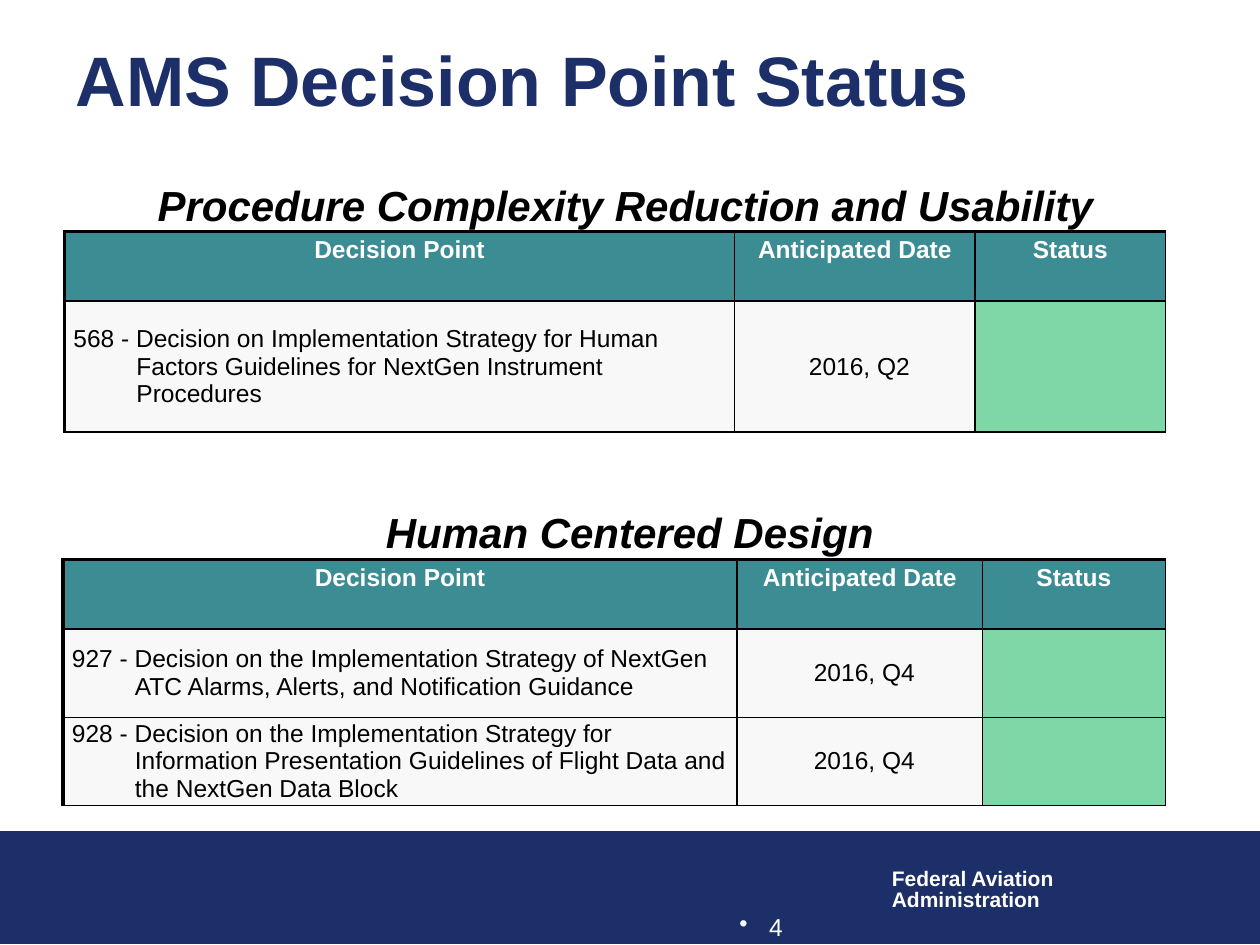
"""Build the AMS decision point status slide."""
from lxml import etree
from pptx import Presentation
from pptx import util as u
from pptx.dml.color import RGBColor
from pptx.enum import shapes, text
from pptx.oxml.ns import qn

NAVY = RGBColor(0x1D, 0x2F, 0x68)
TEAL = RGBColor(0x3C, 0x8C, 0x93)
GREY = RGBColor(0xF2, 0xF2, 0xF2)
GREEN = RGBColor(0x00, 0xB0, 0x50)
BLACK = RGBColor(0, 0, 0)
WHITE = RGBColor(0xFF, 0xFF, 0xFF)
HEADERS = ("Decision Point", "Anticipated Date", "Status")
CENTER = text.PP_ALIGN.CENTER
THIN, THICK = u.Pt(1), u.Pt(2.25)


def style_frame(frame, size, color, bold=False, italic=False, align=text.PP_ALIGN.LEFT):
    """Give every paragraph of a frame the same alignment and font."""
    for para in frame.paragraphs:
        para.alignment = align
        for span in para.runs:
            font = span.font
            font.name, font.size = "Arial", u.Pt(size)
            font.bold, font.italic = bold, italic
            font.color.rgb = color


def set_indent(para, left, hanging):
    """Set the left margin and hanging indent of a paragraph."""
    properties = para._p.get_or_add_pPr()
    properties.set("marL", str(u.Cm(left)))
    properties.set("indent", str(-u.Cm(hanging)))
    return properties


def add_text(page, place, words, size, color, wrap=True, **style):
    """Add a styled text box at a place given in centimetres."""
    box = page.shapes.add_textbox(*map(u.Cm, place))
    frame = box.text_frame
    frame.word_wrap = wrap
    frame.text = words
    style_frame(frame, size, color, **style)
    return frame


def set_borders(cell, first_column, first_row):
    """Draw black cell borders, thicker on the table's left and top edges."""
    widths = {"lnL": THICK if first_column else THIN, "lnR": THIN,
              "lnT": THICK if first_row else THIN, "lnB": THIN}
    properties = cell._tc.get_or_add_tcPr()
    for side, width in widths.items():
        line = etree.SubElement(properties, qn(f"a:{side}"), w=str(width))
        fill = etree.SubElement(line, qn("a:solidFill"))
        etree.SubElement(fill, qn("a:srgbClr"), val=str(BLACK))


def fill_cell(cell, color, opacity=100):
    """Fill a cell with a colour at an opacity in percent."""
    cell.fill.solid()
    cell.fill.fore_color.rgb = color
    if opacity < 100:
        tone = cell._tc.tcPr.find(qn("a:solidFill")).find(qn("a:srgbClr"))
        etree.SubElement(tone, qn("a:alpha"), val=str(opacity * 1000))


def format_header(cell):
    """Format a column heading."""
    fill_cell(cell, TEAL)
    cell.margin_left = cell.margin_right = u.Cm(0.23)
    cell.margin_top = cell.margin_bottom = u.Cm(0.1)
    style_frame(cell.text_frame, 14, WHITE, bold=True, align=CENTER)


def format_body(cell, column):
    """Format a decision, date or status cell."""
    fill_cell(cell, GREEN if column == 2 else GREY, 50)
    cell.margin_left = cell.margin_right = cell.margin_top = cell.margin_bottom = 0
    cell.vertical_anchor = text.MSO_ANCHOR.MIDDLE
    if column < 2:
        left, hanging, align = ((1.45, 1.27, text.PP_ALIGN.LEFT), (0.64, 0.46, CENTER))[column]
        set_indent(cell.text_frame.paragraphs[0], left, hanging)
        style_frame(cell.text_frame, 14, BLACK, align=align)


def add_status_table(page, left, top, widths, row_height, decisions):
    """Add a table of decisions with dates and status colours."""
    header_height = 1.4
    heights = [header_height] + [row_height] * len(decisions)
    rows = [HEADERS] + [(*decision, "") for decision in decisions]
    table = page.shapes.add_table(len(rows), len(widths), u.Cm(left), u.Cm(top),
                                  u.Cm(sum(widths)), u.Cm(sum(heights))).table
    table.horz_banding = False
    for column, width in zip(table.columns, widths):
        column.width = u.Cm(width)
    for r, (height, row) in enumerate(zip(heights, rows)):
        table.rows[r].height = u.Cm(height)
        for c, words in enumerate(row):
            cell = table.cell(r, c)
            cell.text = words
            set_borders(cell, c == 0, r == 0)
            if r == 0:
                format_header(cell)
            else:
                format_body(cell, c)


def add_title(page, words):
    """Fill and place the title placeholder."""
    title = page.shapes.title
    title.left, title.top, title.width, title.height = map(u.Cm, (1.27, 0, 22.86, 3.18))
    title.text_frame.text = words
    title.text_frame.vertical_anchor = text.MSO_ANCHOR.MIDDLE
    style_frame(title.text_frame, 40, NAVY, bold=True)


def add_footer(page, agency, number):
    """Add the footer band with the agency name and the bulleted page number."""
    band = page.shapes.add_shape(shapes.MSO_SHAPE.RECTANGLE,
                                 *map(u.Cm, (0, 16.76, 25.4, 2.26)))
    band.shadow.inherit = False
    band.fill.solid()
    band.fill.fore_color.rgb = NAVY
    band.line.color.rgb = NAVY
    band.line.width = u.Pt(0.75)
    frame = add_text(page, (17.73, 17.4, 3.81, 1.12), agency, 12, WHITE,
                     wrap=False, bold=True)
    for para in frame.paragraphs:
        para.line_spacing = 0.85
    frame = add_text(page, (10.11, 18.26, 5.92, 0.66), number, 14, WHITE,
                     align=text.PP_ALIGN.RIGHT)
    properties = set_indent(frame.paragraphs[0], 0.6, 0.6)
    etree.SubElement(properties, qn("a:buChar"), char="•")


def main():
    """Build and save the deck."""
    deck = Presentation()
    deck.slide_width, deck.slide_height = u.Cm(25.4), u.Cm(19.05)
    page = deck.slides.add_slide(deck.slide_layouts[5])
    add_footer(page, "Federal Aviation\nAdministration", "4")
    add_title(page, "AMS Decision Point Status")

    heading = {"size": 24, "color": BLACK, "bold": True, "italic": True, "align": CENTER}
    add_text(page, (2.54, 3.5, 20.14, 1.27),
             "Procedure Complexity Reduction and Usability", **heading)
    add_status_table(page, 1.3, 4.67, (13.51, 4.85, 3.84), 2.64, [
        ("568 - Decision on Implementation Strategy for Human Factors Guidelines "
         "for NextGen Instrument Procedures", "2016, Q2"),
    ])
    add_text(page, (5.56, 10.08, 14.27, 1.27), "Human Centered Design", **heading)
    add_status_table(page, 1.27, 11.28, (13.59, 4.95, 3.68), 1.78, [
        ("927 - Decision on the Implementation Strategy of NextGen ATC Alarms, "
         "Alerts, and Notification Guidance", "2016, Q4"),
        ("928 - Decision on the Implementation Strategy for Information Presentation "
         "Guidelines of Flight Data and the NextGen Data Block", "2016, Q4"),
    ])
    deck.save("out.pptx")


if __name__ == "__main__":
    main()
